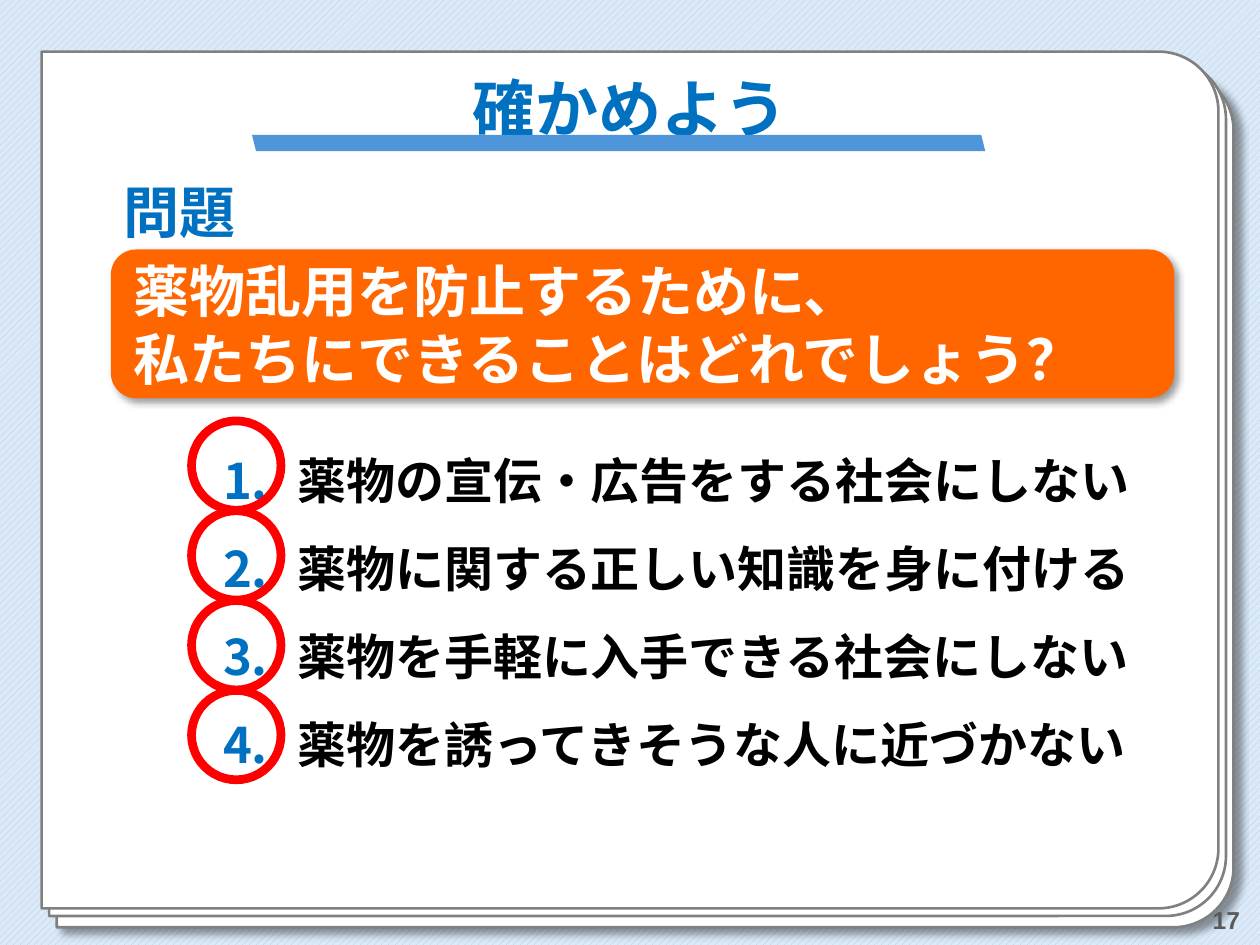
from dataclasses import dataclass

from lxml.etree import SubElement
from pptx import Presentation
from pptx.dml.color import RGBColor
from pptx.enum.dml import MSO_PATTERN as Pattern
from pptx.enum.shapes import MSO_SHAPE as Shape
from pptx.enum.text import MSO_ANCHOR as Anchor, MSO_AUTO_SIZE as Fit, PP_ALIGN as Align
from pptx.oxml.ns import qn
from pptx.util import Inches, Pt

# The page is a grid of 100 columns by 75 rows
WIDTH, HEIGHT = Inches(10), Inches(7.5)
COLUMN, ROW = WIDTH / 100, HEIGHT / 75


@dataclass(frozen=True)
class Theme:
    stripe: str = "A6CAEC"
    sky: str = "DCEAF7"
    paper: str = "FFFFFF"
    edge: str = "808080"
    blue: str = "0070C0"
    underline: str = "4E95D9"
    orange: str = "FF6600"
    red: str = "FF0000"
    black: str = "000000"
    grey: str = "595959"
    latin: str = "Arial"
    japanese: str = "Noto Sans CJK JP"
    title_size: int = 36
    question_size: int = 32
    answer_size: int = 28
    number_size: int = 14


THEME = Theme()
ANSWERS = [
    "薬物の宣伝・広告をする社会にしない",
    "薬物に関する正しい知識を身に付ける",
    "薬物を手軽に入手できる社会にしない",
    "薬物を誘ってきそうな人に近づかない",
]


def rgb(color):
    return RGBColor.from_string(color)


def cells(left, top, width, height):
    """Turn grid columns and rows into slide lengths."""
    return (round(left * COLUMN), round(top * ROW),
            round(width * COLUMN), round(height * ROW))


def add_shadow(shape, distance):
    effects = shape.element.spPr.find(qn("a:effectLst"))
    shadow = SubElement(effects, qn("a:outerShdw"), blurRad=str(Pt(4)),
                        dist=str(Pt(distance)), dir="2700000",
                        algn="tl", rotWithShape="0")
    color = SubElement(shadow, qn("a:srgbClr"), val=THEME.black)
    SubElement(color, qn("a:alpha"), val="40000")


def add_shape(page, kind, area, fill=None, line=None, weight=1.5):
    shape = page.shapes.add_shape(kind, *cells(*area))
    shape.shadow.inherit = False
    if fill:
        shape.fill.solid()
        shape.fill.fore_color.rgb = rgb(fill)
    else:
        shape.fill.background()
    if line:
        shape.line.color.rgb = rgb(line)
        shape.line.width = Pt(weight)
    else:
        shape.line.fill.background()
    return shape


def write(box, text, size, color, font=THEME.japanese, align=Align.LEFT,
          anchor=Anchor.TOP, spacing=1.0, fit=Fit.NONE, wrap=True):
    frame = box.text_frame
    frame.text = text
    frame.word_wrap, frame.auto_size = wrap, fit
    frame.vertical_anchor = anchor
    for para in frame.paragraphs:
        para.alignment, para.line_spacing = align, spacing
        para.space_before = Pt(0)
        for span in para.runs:
            span.font.size, span.font.bold = Pt(size), True
            span.font.name = font
            span.font.color.rgb = rgb(color)
            SubElement(span.font._element, qn("a:ea"), typeface=THEME.japanese)
    return frame


def set_margins(frame, left, top, right, bottom):
    frame.margin_left, frame.margin_top = Inches(left), Inches(top)
    frame.margin_right, frame.margin_bottom = Inches(right), Inches(bottom)


def place(page, holder, area):
    """Move a placeholder to its area and in front of what is drawn so far."""
    holder.left, holder.top, holder.width, holder.height = cells(*area)
    page.shapes._spTree.append(holder.element)
    return holder


def number(para):
    """Give a paragraph a coloured automatic number."""
    props = para._p.get_or_add_pPr()
    props.set("marL", str(Inches(1.37)))
    props.set("indent", str(Inches(-0.59)))
    color = SubElement(props, qn("a:buClr"))
    SubElement(color, qn("a:srgbClr"), val=THEME.blue)
    SubElement(props, qn("a:buFont"), typeface=THEME.japanese)
    SubElement(props, qn("a:buAutoNum"), type="arabicPeriod")


def draw_paper_stack(page):
    long_side, short_side = 93.4, 68
    for left, top in [(17.2, -7.1), (16.6, -8), (16, -8.6)]:
        sheet = add_shape(page, Shape.ROUND_2_SAME_RECTANGLE,
                          (left, top, short_side, long_side), THEME.paper, THEME.edge)
        sheet.rotation = 90
        sheet.adjustments[0], sheet.adjustments[1] = 0.07, 0
        if left == 17.2:
            add_shadow(sheet, 5)


def draw_page_number(page):
    box = page.shapes.add_textbox(*cells(76.9, 71, 22.5, 4))
    write(box, "17", THEME.number_size, THEME.grey, THEME.latin,
          Align.RIGHT, Anchor.MIDDLE)


def draw_title(page):
    title = place(page, page.shapes.title, (6.8, 3.5, 86.4, 10.8))
    write(title, "確かめよう", THEME.title_size, THEME.blue, THEME.latin,
          Align.CENTER, Anchor.MIDDLE, 0.9)


def draw_answers(page):
    body = place(page, page.placeholders[1], (8.9, 31.8, 84.4, 29.7))
    frame = write(body, "\n".join(ANSWERS), THEME.answer_size, THEME.black,
                  spacing=1.5, fit=Fit.SHAPE_TO_FIT_TEXT)
    set_margins(frame, 0.1, 0.16, 0.1, 0.05)
    for para in frame.paragraphs:
        number(para)


def draw_question(page):
    box = add_shape(page, Shape.ROUNDED_RECTANGLE, (8.8, 19.8, 84.4, 11.8), THEME.orange)
    box.adjustments[0] = 0.17
    add_shadow(box, 3)
    frame = write(box, "薬物乱用を防止するために、\v私たちにできることはどれでしょう？",
                  THEME.question_size, THEME.paper, fit=Fit.SHAPE_TO_FIT_TEXT)
    set_margins(frame, 0.12, 0, 0.12, 0)

    label = page.shapes.add_textbox(*cells(8.8, 14.1, 11, 5.9))
    frame = write(label, "問題", THEME.question_size, THEME.blue, anchor=Anchor.BOTTOM,
                  spacing=0.9, fit=Fit.SHAPE_TO_FIT_TEXT, wrap=False)
    frame.paragraphs[0].space_after = Pt(30)


def draw_underline(page):
    bar = add_shape(page, Shape.PARALLELOGRAM, (20, 10.7, 58.2, 1.3), THEME.underline)
    bar.element.spPr.find(qn("a:xfrm")).set("flipH", "1")


def draw_circles(page):
    size, step = 7.1, 7.13
    for index in range(len(ANSWERS)):
        add_shape(page, Shape.OVAL, (15.2, 33.4 + index * step, size, size),
                  line=THEME.red, weight=5)


def main():
    deck = Presentation()
    deck.slide_width, deck.slide_height = WIDTH, HEIGHT
    page = deck.slides.add_slide(deck.slide_layouts[1])

    # Striped background
    fill = page.background.fill
    fill.patterned()
    fill.pattern = Pattern.WIDE_UPWARD_DIAGONAL
    fill.fore_color.rgb, fill.back_color.rgb = rgb(THEME.stripe), rgb(THEME.sky)

    # Parts from back to front
    for draw in (draw_paper_stack, draw_page_number, draw_title, draw_answers,
                 draw_question, draw_underline, draw_circles):
        draw(page)
    deck.save("out.pptx")


if __name__ == "__main__":
    main()
